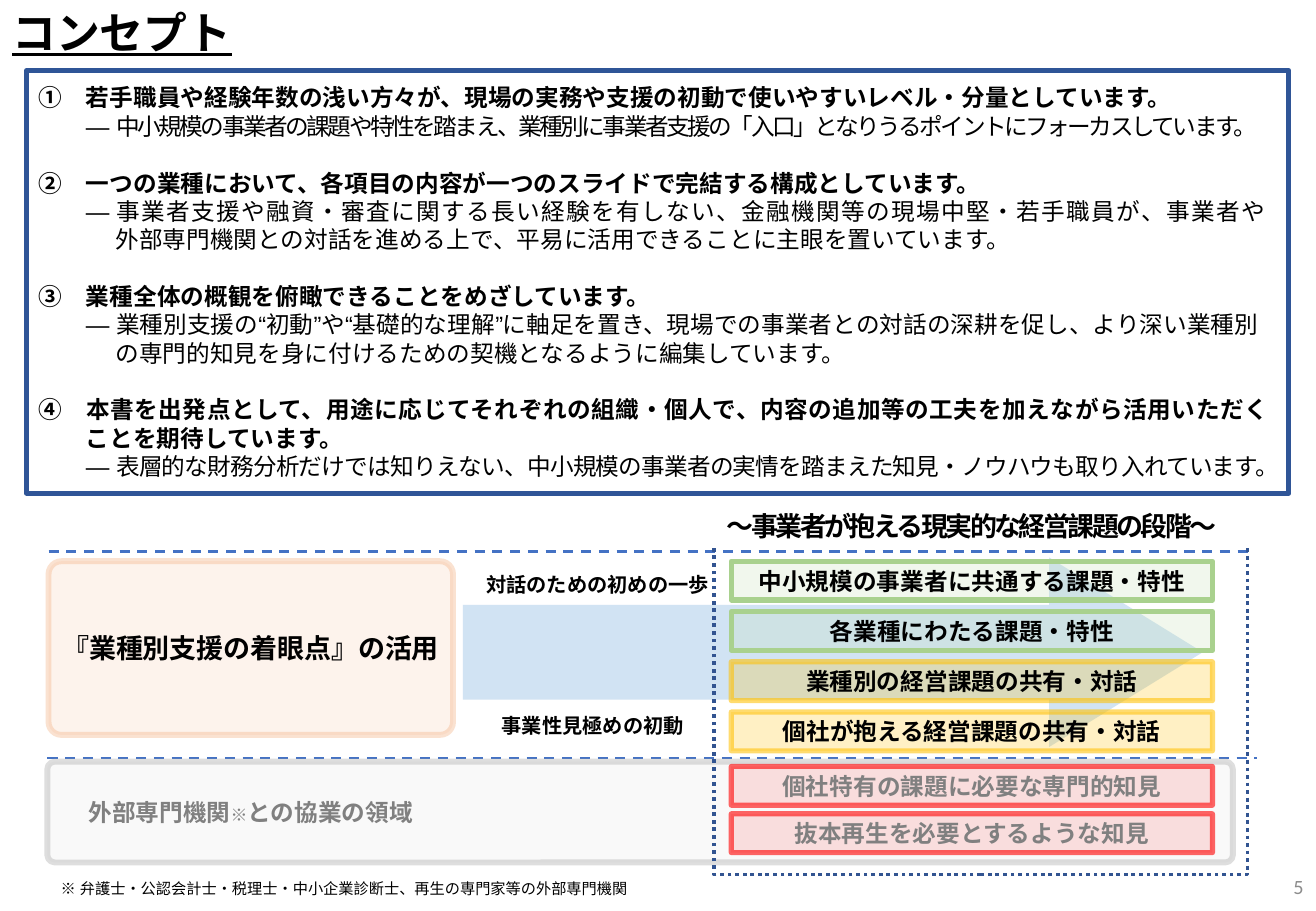
from lxml.etree import SubElement
from pptx import Presentation
from pptx.dml.color import RGBColor
from pptx.enum.dml import MSO_LINE_DASH_STYLE as Dash
from pptx.enum.shapes import MSO_CONNECTOR, MSO_SHAPE as Shape
from pptx.enum.text import MSO_ANCHOR as Anchor, MSO_AUTO_SIZE, PP_ALIGN as Align
from pptx.oxml.ns import qn
from pptx.util import Inches, Pt

BLACK = RGBColor(0x00, 0x00, 0x00)
WHITE = RGBColor(0xFF, 0xFF, 0xFF)
GRAY = RGBColor(0x80, 0x80, 0x80)
NUMBER_GRAY = RGBColor(0x8C, 0x8C, 0x8C)
AREA_GRAY = RGBColor(0xD9, 0xD9, 0xD9)
AREA_EDGE = RGBColor(0xA6, 0xA6, 0xA6)
NAVY = RGBColor(0x2F, 0x55, 0x97)
DOT_NAVY = RGBColor(0x32, 0x54, 0x91)
BLUE = RGBColor(0x44, 0x72, 0xC4)
PALE_BLUE = RGBColor(0xBD, 0xD7, 0xEE)
ORANGE = RGBColor(0xF4, 0xB1, 0x83)
PALE_GREEN = RGBColor(0xC5, 0xE0, 0xB4)
GREEN = RGBColor(0xA9, 0xD1, 0x8E)
YELLOW = RGBColor(0xFF, 0xC0, 0x00)
RED = RGBColor(0xFF, 0x00, 0x00)

TITLE = "コンセプト"
# Each concept: heading runs, then detail runs; a run is (text, letter spacing in points)
CONCEPTS = [
    ([("①　若手職員や経験年数の浅い方々が、現場の実務や支援の初動で使いやすいレベル・分量としています。", 0)],
     [("― ", 0), ("中小規模の事業者の課題や特性を踏まえ、業種別に事業者支援の「入口」となりうるポイントにフォーカスしています。", -1.5)]),
    ([("②　一つの業種において、各項目の内容が一つのスライドで完結する構成としています。", 0)],
     [("― ", 0), ("事業者支援や融資・審査に関する長い経験を有しない、金融機関等の現場中堅・若手職員が、事業者や\v", 0.8),
      ("外部専門機関との対話を進める上で、平易に活用できることに主眼を置いています。", 0)]),
    ([("③　業種全体の概観を俯瞰できることをめざしています。", 0)],
     [("― 業種別支援の“初動”や“基礎的な理解”に軸足を置き、現場での事業者との対話の深耕を促し、より深い業種別"
       "の専門的知見を身に付けるための契機となるように編集しています。", 0)]),
    ([("④　", 0), ("本書を出発点として、用途に応じてそれぞれの組織・個人で、内容の追加等の工夫を加えながら活用いただく\v", 0.3),
      ("ことを期待しています。", 0)],
     [("― ", 0), ("表層的な財務分析だけでは知りえない、中小規模の事業者の実情を踏まえた知見・ノウハウも取り入れています。", -0.5)]),
]
USAGE = "『業種別支援の着眼点』の活用"
STAGE_HEADING = "～事業者が抱える現実的な経営課題の段階～"
ARROW_LABELS = [("対話のための初めの一歩", 35.54, 62.13), ("事業性見極めの初動", 35.17, 77.6)]
COLLABORATION = [("外部専門機関", 14), ("※", 10), ("との協業の領域", 14)]
FOOTNOTE = "※ 弁護士・公認会計士・税理士・中小企業診断士、再生の専門家等の外部専門機関"
PAGE_NUMBER = "5"

# Bar looks: fill, fill opacity, line, line opacity, text colour
COMMON = (PALE_GREEN, 23, GREEN, 100, BLACK)
SPECIFIC = (YELLOW, 23, YELLOW, 57, BLACK)
EXPERT = (RED, 11, RED, 60, GRAY)
# Bar groups: top and pitch in shares of the slide's height, then the bars
STAGES = [
    (61.6, 5.52, [("中小規模の事業者に共通する課題・特性", COMMON),
                  ("各業種にわたる課題・特性", COMMON),
                  ("業種別の経営課題の共有・対話", SPECIFIC),
                  ("個社が抱える経営課題の共有・対話", SPECIFIC)]),
    (84.13, 5.2, [("個社特有の課題に必要な専門的知見", EXPERT),
                  ("抜本再生を必要とするような知見", EXPERT)]),
]
BAR_LEFT, BAR_WIDTH, BAR_HEIGHT = 55.57, 36.57, 4.27
DIVIDERS = [(3.69, 95.26, 60.53), (3.6, 95.54, 83.2)]

prs = Presentation()
prs.slide_width, prs.slide_height = Inches(10.83), Inches(7.5)
slide = prs.slides.add_slide(prs.slide_layouts[5])


def across(share):
    return int(prs.slide_width * share / 100)


def down(share):
    return int(prs.slide_height * share / 100)


def place(x, y, width, height):
    """Turn percentages of the slide into left, top, width and height."""
    return across(x), down(y), across(width), down(height)


def set_opacity(color_format, percent):
    if percent < 100:
        color = color_format._xFill.find(qn("a:srgbClr"))
        SubElement(color, qn("a:alpha"), val=str(percent * 1000))


def add_panel(kind, area, fill=None, line=None, rounding=None):
    """fill is (colour, opacity); line is (colour, points, opacity)."""
    panel = slide.shapes.add_shape(kind, *place(*area))
    panel.shadow.inherit = False
    if rounding:
        panel.adjustments[0] = rounding
    if fill:
        panel.fill.solid()
        panel.fill.fore_color.rgb = fill[0]
        set_opacity(panel.fill.fore_color, fill[1])
    else:
        panel.fill.background()
    if line:
        panel.line.color.rgb = line[0]
        panel.line.width = Pt(line[1])
        set_opacity(panel.line.color, line[2])
    else:
        panel.line.fill.background()
    return panel


def style(paragraph, size, color=BLACK, bold=True, font="Calibri", align=Align.CENTER):
    """Format a paragraph, with one font for Latin and Japanese characters."""
    paragraph.alignment = align
    paragraph.font.size = Pt(size)
    paragraph.font.bold = bold
    paragraph.font.color.rgb = color
    paragraph.font.name = font
    SubElement(paragraph.font._element, qn("a:ea"), typeface=font)


def write(shape, text, size, anchor=Anchor.MIDDLE, **look):
    frame = shape.text_frame
    frame.word_wrap = True
    frame.vertical_anchor = anchor
    frame.text = text
    style(frame.paragraphs[0], size, **look)


def add_label(area, text, size, **look):
    write(slide.shapes.add_textbox(*place(*area)), text, size, **look)


def add_spaced_runs(paragraph, runs):
    for text, spacing in runs:
        run = paragraph.add_run()
        run.text = text.rstrip("\v")
        if spacing:
            run._r.get_or_add_rPr().set("spc", str(int(spacing * 100)))
        if text.endswith("\v"):
            paragraph.add_line_break()


def hang(paragraph, left, hanging):
    """Indent in points, with the first line set back."""
    properties = paragraph._p.get_or_add_pPr()
    properties.set("marL", str(Pt(left)))
    properties.set("indent", str(-Pt(hanging)))


title = slide.shapes.title
title.left, title.top, title.width, title.height = place(0, 0, 65.1, 7.2)
write(title, TITLE, 26, anchor=Anchor.TOP, font="Arial", align=Align.LEFT)
title.text_frame.auto_size = MSO_AUTO_SIZE.NONE
title.text_frame.paragraphs[0].font.underline = True

concept_frame = add_panel(Shape.RECTANGLE, (2.03, 7.73, 95.91, 46.4), line=(NAVY, 3, 100)).text_frame
concept_frame.word_wrap = True
concept_frame.vertical_anchor = Anchor.MIDDLE
for index, (heading, detail) in enumerate(CONCEPTS):
    head = concept_frame.add_paragraph() if index else concept_frame.paragraphs[0]
    head.space_before = Pt(16.8 if index else 0)
    for paragraph, runs, left, hanging in ((head, heading, 28, 28),
                                           (concept_frame.add_paragraph(), detail, 45.5, 17.5)):
        style(paragraph, 14, bold=paragraph is head, font="Arial", align=Align.LEFT)
        hang(paragraph, left, hanging)
        add_spaced_runs(paragraph, runs)

arrow = add_panel(Shape.RIGHT_ARROW, (35.17, 61.2, 56.22, 20.8), fill=(PALE_BLUE, 69))
arrow.adjustments[1] = 0.81

usage = add_panel(Shape.ROUNDED_RECTANGLE, (3.69, 61.6, 30.74, 19.07),
                  (ORANGE, 15), (ORANGE, 3.5, 36), 0.075)
usage.text_frame.margin_left = usage.text_frame.margin_right = 0
write(usage, USAGE, 16)

for text, x, y in ARROW_LABELS:
    add_label((x, y, 19.76, 4), text, 12)

for start, end, y in DIVIDERS:
    divider = slide.shapes.add_connector(MSO_CONNECTOR.STRAIGHT, across(start), down(y), across(end), down(y))
    divider.line.color.rgb = BLUE
    divider.line.width = Pt(1.5)
    divider.line.dash_style = Dash.DASH
    SubElement(divider._element.spPr, qn("a:effectLst"))

collaboration = add_panel(Shape.ROUNDED_RECTANGLE, (3.6, 83.6, 90.09, 11.07),
                          (AREA_GRAY, 15), (AREA_EDGE, 3.5, 36), 0.075)
collaboration.text_frame.margin_left = Inches(0.32)
write(collaboration, "", 14, color=GRAY, align=Align.LEFT)
for text, size in COLLABORATION:
    run = collaboration.text_frame.paragraphs[0].add_run()
    run.text = text
    run.font.size = Pt(size)

stage_frame = add_panel(Shape.RECTANGLE, (54.28, 58.53, 40.52, 37.47), line=(DOT_NAVY, 2.25, 100))
stage_frame.line.dash_style = Dash.ROUND_DOT

stage_heading = add_panel(Shape.RECTANGLE, (51.51, 55.2, 44.68, 4.93), fill=(WHITE, 100))
write(stage_heading, "", 16)
add_spaced_runs(stage_heading.text_frame.paragraphs[0], [(STAGE_HEADING, -1.5)])

for top, pitch, bars in STAGES:
    for row, (text, (fill, fill_opacity, line, line_opacity, color)) in enumerate(bars):
        bar = add_panel(Shape.RECTANGLE, (BAR_LEFT, top + row * pitch, BAR_WIDTH, BAR_HEIGHT),
                        (fill, fill_opacity), (line, 3, line_opacity))
        write(bar, text, 14, color=color)

add_label((3.69, 95.87, 51.88, 3.33), FOOTNOTE, 9, bold=False, font="Arial", align=Align.LEFT)
add_label((95.08, 94.67, 4.89, 5.33), PAGE_NUMBER, 12, color=NUMBER_GRAY, bold=False, align=Align.RIGHT)

prs.save("out.pptx")
